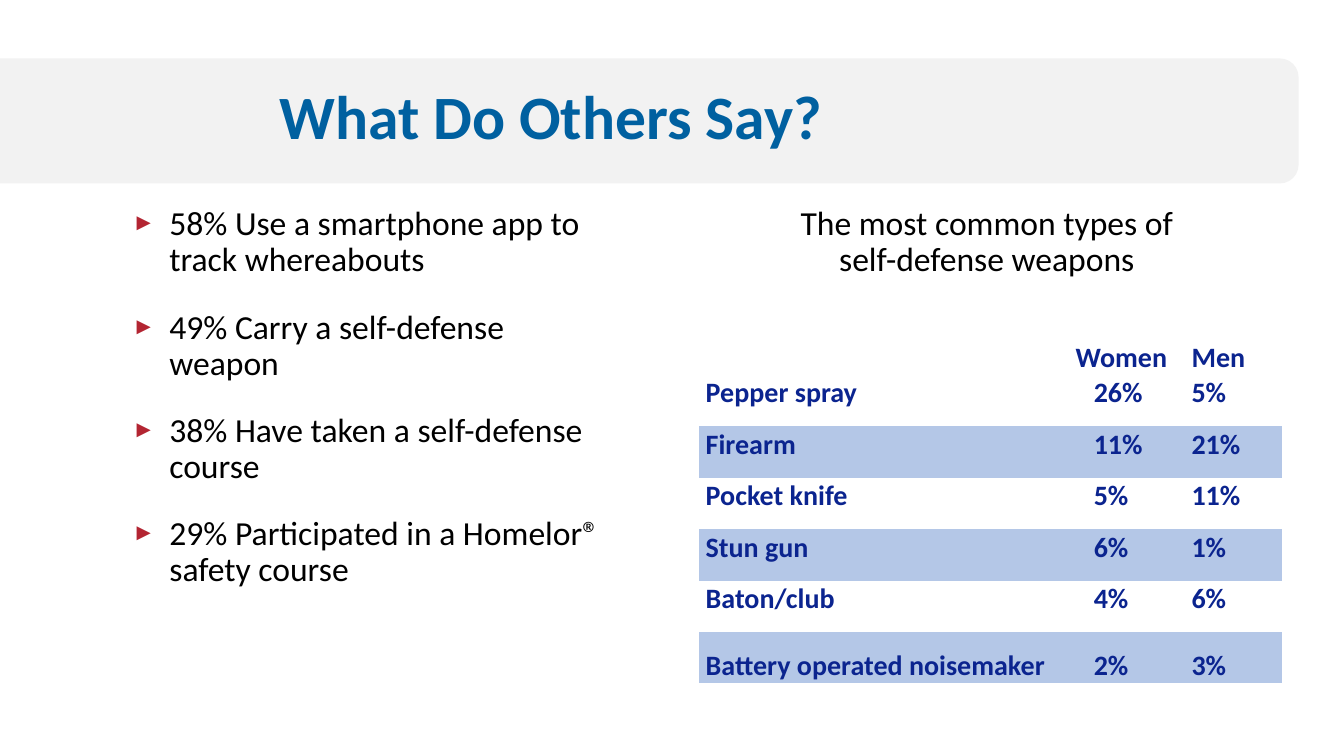
from lxml.etree import SubElement
from pptx import Presentation
from pptx.dml.color import RGBColor
from pptx.enum.shapes import MSO_SHAPE
from pptx.enum.text import MSO_ANCHOR, MSO_AUTO_SIZE, PP_ALIGN
from pptx.oxml.ns import qn
from pptx.util import Inches, Pt

POINTS = [
    "58% Use a smartphone app to track whereabouts",
    "49% Carry a self-defense weapon",
    "38% Have taken a self-defense course",
    "29% Participated in a Homelor® safety course",
]
ROWS = [
    ("Pepper spray", "26%", "5%"),
    ("Firearm", "11%", "21%"),
    ("Pocket knife", "5%", "11%"),
    ("Stun gun", "6%", "1%"),
    ("Baton/club", "4%", "6%"),
    ("Battery operated noisemaker", "2%", "3%"),
]
PLAIN = "{2D5ABB26-0587-4C30-8999-92F81FD0307C}"


def paint(code):
    return RGBColor.from_string(code)


class Deck:
    font = "Calibri"
    gray, blue, navy = "F2F2F2", "0060A0", "0B248F"
    black, red, stripe = "000000", "B32532", "B4C7E7"

    def __init__(self):
        self.file = Presentation()
        self.file.slide_width = Inches(13.33)
        self.file.slide_height = Inches(7.5)
        self.slide = self.file.slides.add_slide(self.file.slide_layouts[3])

    def style(self, para, size, color, bold=False):
        for run in para.runs:
            run.font.name = self.font
            run.font.size = Pt(size)
            run.font.bold = bold
            run.font.color.rgb = paint(color)

    def holder(self, index, box, text, anchor):
        """Move a placeholder, fill it and return its paragraphs."""
        shape = self.slide.placeholders[index]
        shape.left, shape.top, shape.width, shape.height = map(Inches, box)
        frame = shape.text_frame
        frame.text = text
        frame.word_wrap = True
        frame.auto_size = MSO_AUTO_SIZE.NONE
        frame.vertical_anchor = anchor
        for para in frame.paragraphs:
            para.line_spacing = 0.9
        return frame.paragraphs

    def band(self, box):
        shape = self.slide.shapes.add_shape(
            MSO_SHAPE.ROUNDED_RECTANGLE, *map(Inches, box))
        shape.adjustments[0] = 0.15
        shape.shadow.inherit = False
        shape.fill.solid()
        shape.fill.fore_color.rgb = paint(self.gray)
        shape.line.fill.background()
        # Send it behind the placeholders
        self.slide.shapes.element.insert(2, shape.element)

    def title(self, box, text):
        para = self.holder(0, box, text, MSO_ANCHOR.MIDDLE)[0]
        para.alignment = PP_ALIGN.LEFT
        self.style(para, 44, self.blue, True)

    def body(self, index, box, text, marks):
        for para in self.holder(index, box, text, MSO_ANCHOR.TOP):
            para.space_before = Pt(10)
            para.space_after = Pt(12 if marks else 0)
            para.alignment = PP_ALIGN.LEFT if marks else PP_ALIGN.CENTER
            self.style(para, 24, self.black)
            self.mark(para, marks)

    def mark(self, para, shown):
        props = para._p.get_or_add_pPr()
        props.set("marL", str(Inches(0.38 if shown else 0.01)))
        props.set("indent", str(Inches(-0.37 if shown else 0)))
        if not shown:
            SubElement(props, qn("a:buNone"))
            return
        color = SubElement(props, qn("a:buClr"))
        SubElement(color, qn("a:srgbClr"), val=self.red)
        SubElement(props, qn("a:buSzPct"), val="70000")
        SubElement(props, qn("a:buFont"), typeface="Arial")
        SubElement(props, qn("a:buChar"), char="►")

    def cell(self, cell, text, anchor, gap=0, fill=None):
        cell.margin_left = cell.margin_right = Inches(0.07)
        cell.margin_top = cell.margin_bottom = 0
        cell.vertical_anchor = anchor
        if fill:
            cell.fill.solid()
            cell.fill.fore_color.rgb = paint(fill)
        else:
            cell.fill.background()
        para = cell.text_frame.paragraphs[0]
        para.text = text
        para.line_spacing = Pt(14)
        para.space_before = para.space_after = Pt(gap)
        self.style(para, 20, self.navy, True)

    def table(self, box, widths, rows):
        table = self.slide.shapes.add_table(
            len(rows) + 1, len(widths), *map(Inches, box)).table
        table.first_row = table.horz_banding = False
        table._tbl.tblPr.find(qn("a:tableStyleId")).text = PLAIN
        for col, width in zip(table.columns, widths):
            col.width = Inches(width)
        for row in table.rows:
            row.height = Inches(0.51)
        table.rows[0].height = Inches(0.6)

        # Header: "Women" spans the narrow column
        table.cell(0, 1).merge(table.cell(0, 2))
        for col, text in [(0, ""), (1, "Women"), (3, "Men")]:
            self.cell(table.cell(0, col), text, MSO_ANCHOR.BOTTOM)

        # Striped rows: the label spans the narrow column
        for num, row in enumerate(rows, 1):
            table.cell(num, 0).merge(table.cell(num, 1))
            last = num == len(rows)
            for col, text in zip((0, 2, 3), row):
                self.cell(table.cell(num, col), text,
                          MSO_ANCHOR.BOTTOM if last else MSO_ANCHOR.MIDDLE,
                          6 if last else 0,
                          None if num % 2 else self.stripe)


def main():
    deck = Deck()
    # Heading
    deck.band((-0.32, 0.58, 13.2, 1.24))
    deck.title((2.67, 0.58, 10.21, 1.22), "What Do Others Say?")
    # Two columns of text
    deck.body(1, (1.2, 2, 4.98, 4.76), "\n".join(POINTS), True)
    deck.body(2, (7.33, 2, 4.98, 4.76),
              "The most common types of \vself-defense weapons ", False)
    # Weapons by gender
    deck.table((6.93, 3.12, 5.78, 3.67), (3.67, 0.16, 0.97, 0.97), ROWS)
    deck.file.save("out.pptx")


if __name__ == "__main__":
    main()
